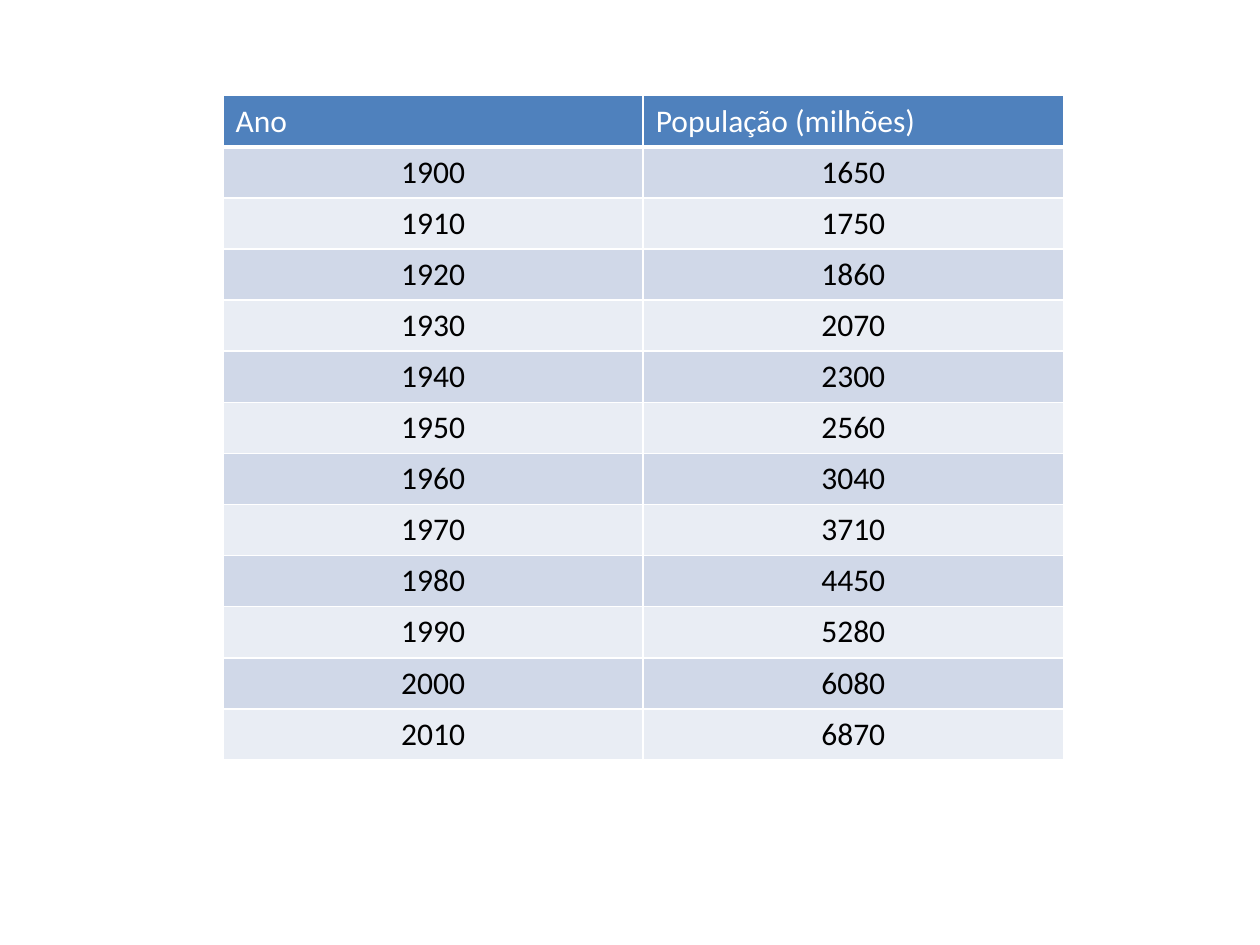
from lxml import etree
from pptx import Presentation
from pptx.dml.color import RGBColor
from pptx.enum.text import PP_ALIGN
from pptx.oxml.ns import qn
from pptx.util import Inches, Pt

LEFT, CENTER = PP_ALIGN.LEFT, PP_ALIGN.CENTER
HEAD = ("Ano", "População (milhões)")
PEOPLE = (1650, 1750, 1860, 2070, 2300, 2560,
          3040, 3710, 4450, 5280, 6080, 6870)
ROWS = [HEAD] + [(1900 + 10 * i, n) for i, n in enumerate(PEOPLE)]
BLUE, WHITE, BLACK = "4F81BD", "FFFFFF", "000000"
BANDS = ("E9EDF4", "D0D8E8")


def color(value):
    return RGBColor.from_string(value)


def edge(cell, side, width):
    line = etree.SubElement(cell._tc.get_or_add_tcPr(), qn("a:ln" + side),
                            w=str(Pt(width)))
    fill = etree.SubElement(line, qn("a:solidFill"))
    etree.SubElement(fill, qn("a:srgbClr"), val=WHITE)


def style(cell, value, row):
    top = row == 0
    for side in "LRTB":
        edge(cell, side, 3 if top and side == "B" else 1)
    cell.fill.solid()
    cell.fill.fore_color.rgb = color(BLUE if top else BANDS[row % 2])
    cell.text = str(value)
    para = cell.text_frame.paragraphs[0]
    para.alignment = LEFT if top else CENTER
    font = para.font
    font.name, font.size, font.bold = "Calibri", Pt(18), False
    font.color.rgb = color(WHITE if top else BLACK)


def main():
    """Build the slide with the table of years and population."""
    deck = Presentation()
    deck.slide_width, deck.slide_height = Inches(10), Inches(7.5)
    slide = deck.slides.add_slide(deck.slide_layouts[6])
    table = slide.shapes.add_table(
        len(ROWS), len(HEAD), Inches(1.77), Inches(0.76),
        Inches(6.67), Inches(5.27)).table
    for r, values in enumerate(ROWS):
        for c, value in enumerate(values):
            style(table.cell(r, c), value, r)
    deck.save("out.pptx")


if __name__ == "__main__":
    main()
